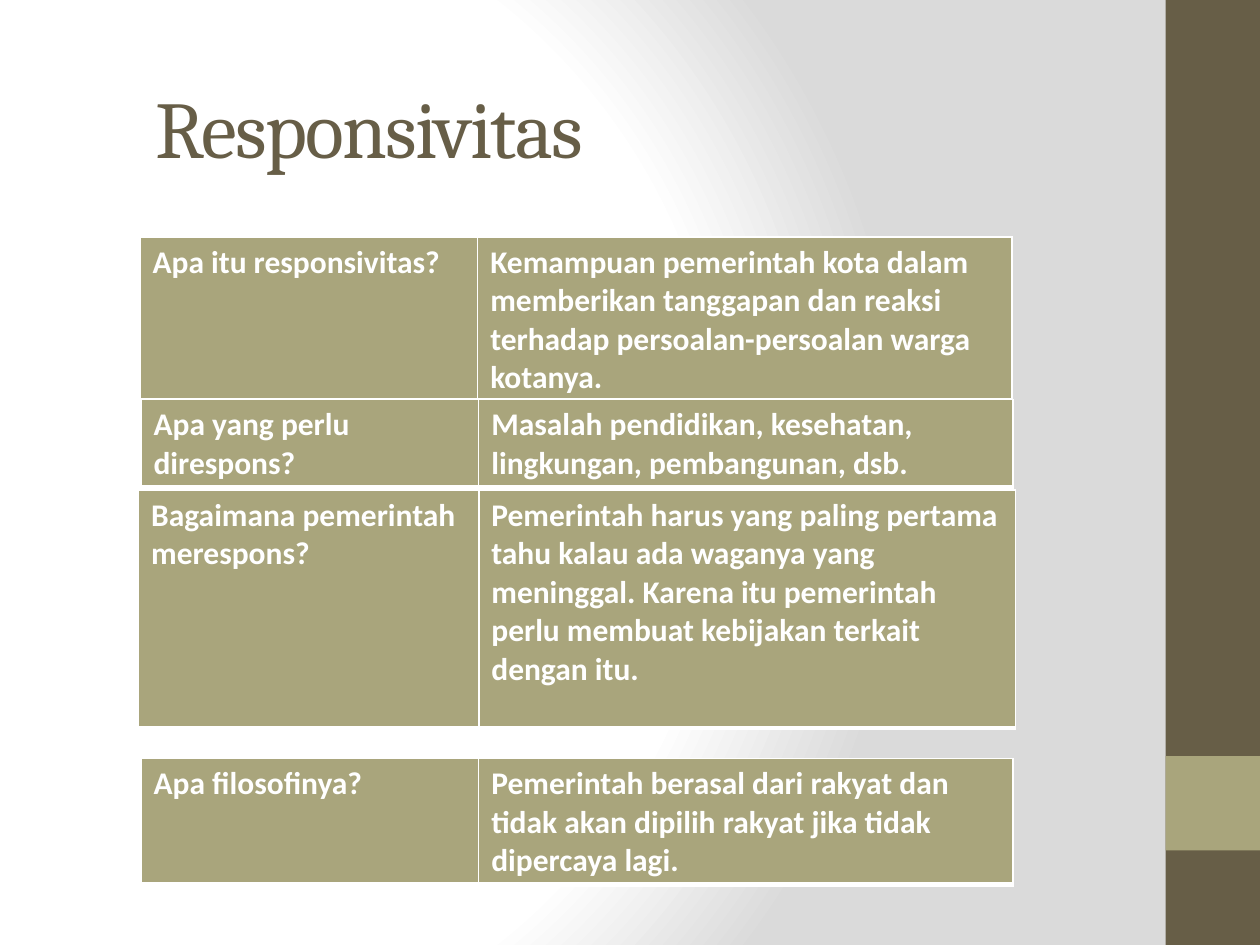
"""Build the Responsivitas slide with four question-and-answer tables."""
from pptx import Presentation
from pptx.dml.color import RGBColor
from pptx.enum.shapes import MSO_SHAPE as Shape
from pptx.enum.text import MSO_ANCHOR as Anchor
from pptx.oxml import parse_xml
from pptx.oxml.ns import nsdecls, qn
from pptx.util import Pt

WHITE, OLIVE, BROWN = "FFFFFF", "A9A57C", "675E47"
TITLE = "Responsivitas"
TITLE_FONT = {"name": "Cambria", "size": Pt(46), "bold": False}
CELL_FONT = {"name": "Calibri", "size": Pt(18), "bold": True}
BANDS = [(0, 540, BROWN), (432, 54, OLIVE)]
GRADIENT = [(0, WHITE), (75, WHITE), (100, "DADADA")]
BORDERS = [("lnL", 1), ("lnR", 1), ("lnT", 1), ("lnB", 3)]
TABLES = [
    {"place": (80, 135.4, 93.6), "columns": (193, 305.3),
     "texts": ("Apa itu responsivitas?",
               "Kemampuan pemerintah kota dalam memberikan tanggapan dan reaksi "
               "terhadap persoalan-persoalan warga kotanya.")},
    {"place": (80.6, 228.2, 50.4), "columns": (193, 305.3),
     "texts": ("Apa yang perlu direspons?",
               "Masalah pendidikan, kesehatan, lingkungan, pembangunan, dsb.")},
    {"place": (79.2, 280.1, 136), "columns": (194.4, 306.7),
     "texts": ("Bagaimana pemerintah merespons?",
               "Pemerintah harus yang paling pertama tahu kalau ada waganya yang "
               "meninggal. Karena itu pemerintah perlu membuat kebijakan terkait "
               "dengan itu.")},
    {"place": (80.6, 433.4, 72), "columns": (193, 305.3),
     "texts": ("Apa filosofinya?",
               "Pemerintah berasal dari rakyat dan tidak akan dipilih rakyat jika "
               "tidak dipercaya lagi.")},
]


def color(value):
    return RGBColor.from_string(value)


def paint(fill, value):
    fill.solid()
    fill.fore_color.rgb = color(value)


def write(text_frame, text, formats, value):
    run = text_frame.paragraphs[0].add_run()
    run.text = text
    for name, setting in formats.items():
        setattr(run.font, name, setting)
    run.font.color.rgb = color(value)
    return run


def set_background(slide):
    slide.background.fill.gradient()
    old = slide.element.find(".//" + qn("a:gradFill"))
    stops = "".join(f'<a:gs pos="{position * 1000}"><a:srgbClr val="{value}"/></a:gs>'
                    for position, value in GRADIENT)
    old.getparent().replace(old, parse_xml(
        f'<a:gradFill {nsdecls("a")} rotWithShape="1"><a:gsLst>{stops}</a:gsLst>'
        '<a:path path="circle"><a:fillToRect l="20000" t="50000" r="100000" b="50000"/>'
        '</a:path></a:gradFill>'))


def add_band(slide, top, height, value):
    band = slide.shapes.add_shape(Shape.RECTANGLE, Pt(666), Pt(top), Pt(54), Pt(height))
    band.shadow.inherit = False
    paint(band.fill, value)
    band.line.fill.background()


def add_title(slide):
    box = slide.shapes.add_textbox(Pt(82), Pt(27.4), Pt(553), Pt(90))
    box.text_frame.word_wrap = True
    box.text_frame.vertical_anchor = Anchor.MIDDLE
    run = write(box.text_frame, TITLE, TITLE_FONT, BROWN)
    run.font._element.set("spc", "-100")


def add_borders(cell):
    properties = cell._tc.get_or_add_tcPr()
    for index, (tag, width) in enumerate(BORDERS):
        properties.insert(index, parse_xml(
            f'<a:{tag} {nsdecls("a")} w="{Pt(width)}"><a:solidFill>'
            f'<a:srgbClr val="{WHITE}"/></a:solidFill></a:{tag}>'))


def add_question(slide, place, columns, texts):
    left, top, height = place
    table = slide.shapes.add_table(1, len(columns), Pt(left), Pt(top),
                                   Pt(sum(columns)), Pt(height)).table
    for index, (width, text) in enumerate(zip(columns, texts)):
        table.columns[index].width = Pt(width)
        cell = table.cell(0, index)
        paint(cell.fill, OLIVE)
        add_borders(cell)
        write(cell.text_frame, text, CELL_FONT, WHITE)


def main():
    presentation = Presentation()
    presentation.slide_width, presentation.slide_height = Pt(720), Pt(540)
    slide = presentation.slides.add_slide(presentation.slide_layouts[6])
    set_background(slide)
    for band in BANDS:
        add_band(slide, *band)
    add_title(slide)
    for question in TABLES:
        add_question(slide, **question)
    presentation.save("out.pptx")


if __name__ == "__main__":
    main()
